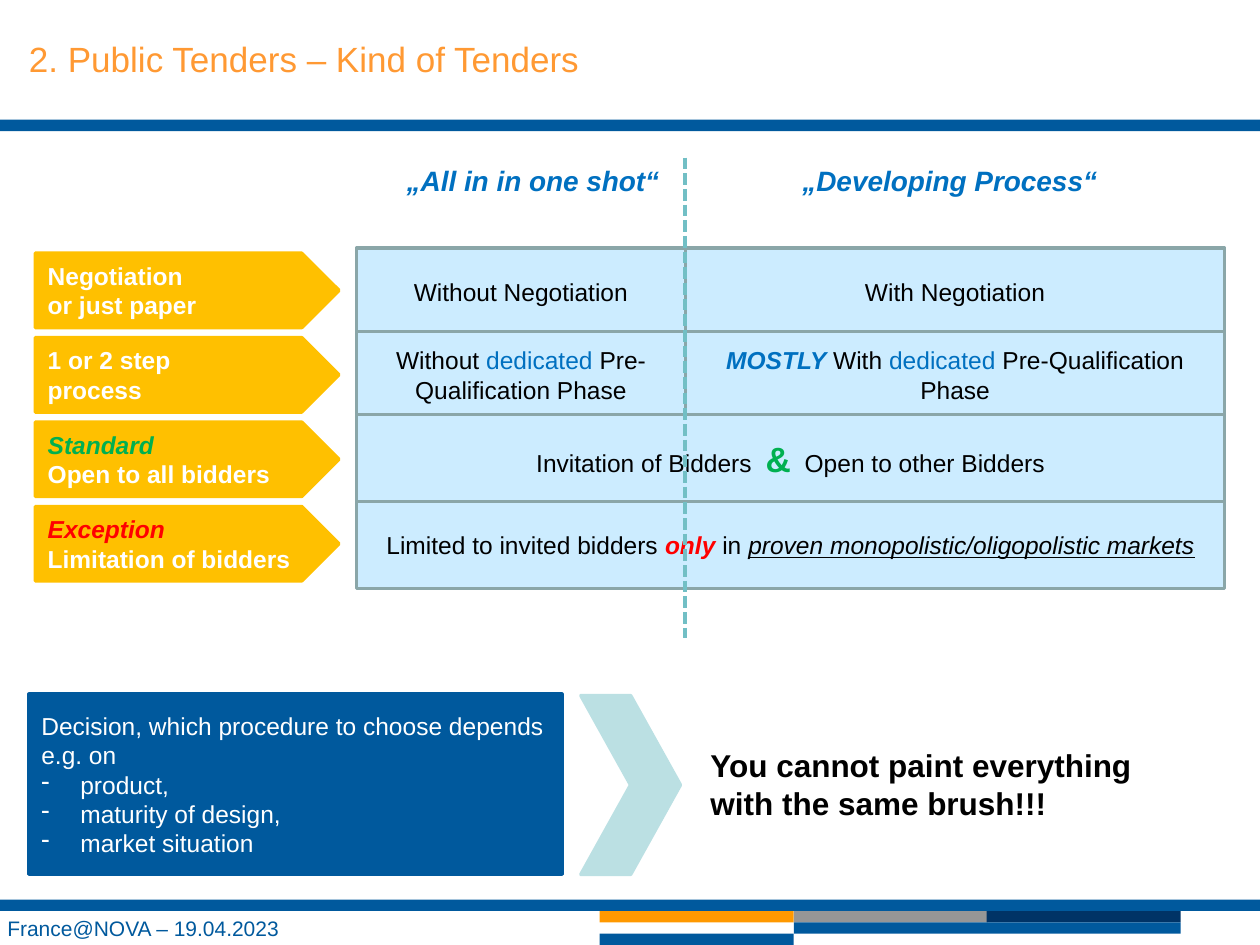
from pptx import Presentation
from pptx.dml.color import RGBColor
from pptx.enum import dml, shapes, text
from pptx.oxml.ns import qn
from pptx.util import Inches, Pt

BLUE = RGBColor(0x00, 0x59, 0x9D)
NAVY = RGBColor(0x00, 0x33, 0x66)
ACCENT = RGBColor(0x00, 0x70, 0xC0)
ORANGE = RGBColor(0xFF, 0x99, 0x00)
TITLE_ORANGE = RGBColor(0xFF, 0x99, 0x33)
GRAY = RGBColor(0x96, 0x96, 0x96)
AMBER = RGBColor(0xFF, 0xC0, 0x00)
PALE_BLUE = RGBColor(0xCC, 0xEC, 0xFF)
CELL_LINE = RGBColor(0x8A, 0xA6, 0xA8)
PALE_TEAL = RGBColor(0xBB, 0xE0, 0xE3)
TEAL = RGBColor(0x72, 0xBF, 0xC5)
GREEN = RGBColor(0x00, 0xB0, 0x50)
RED = RGBColor(0xFF, 0x00, 0x00)
WHITE = RGBColor(0xFF, 0xFF, 0xFF)
BLACK = RGBColor(0, 0, 0)

# Content: a line is a list of (words, format) runs
TITLE = "2. Public Tenders – Kind of Tenders"
FOOTER = "France@NOVA – 19.04.2023"
HEADINGS = [("„All in in one shot“", 3.13, 2.24), ("„Developing Process“", 6.27, 2.57)]
EMPHASIS = {"bold": True, "italic": True}
CRITERIA = [
    [[("Negotiation", {})], [("or just paper", {})]],
    [[("1 or 2 step", {})], [("process", {})]],
    [[("Standard", {"color": GREEN, "italic": True})], [("Open to all bidders", {})]],
    [[("Exception", {"color": RED, "italic": True})], [("Limitation of bidders", {})]],
]
DEDICATED = ("dedicated", {"color": ACCENT})
ROWS = [
    [[("Without Negotiation", {})], [("With Negotiation", {})]],
    [[("Without ", {}), DEDICATED, (" Pre-Qualification Phase", {})],
     [("MOSTLY ", {"color": ACCENT, **EMPHASIS}), ("With ", {}), DEDICATED,
      (" Pre-Qualification Phase", {})]],
    [[("Invitation of Bidders  ", {}), ("&", {"color": GREEN, "bold": True, "size": 20}),
      ("  Open to other Bidders", {})]],
    [[("Limited to invited bidders ", {}), ("only", {"color": RED, **EMPHASIS}), (" in ", {}),
      ("proven monopolistic/oligopolistic markets", {"italic": True, "underline": True})]],
]
DECISION = "Decision, which procedure to choose depends e.g. on"
FACTORS = ["product,", "maturity of design,", "market situation"]
CONCLUSION = ["You cannot paint everything", "with the same brush!!!"]

# Layout
BAR = 0.09
BARS = [  # left, top, width, colour
    (4.76, 7.23, 1.54, ORANGE), (6.3, 7.23, 1.54, GRAY), (7.83, 7.23, 1.54, NAVY),
    (0, 7.14, 10, BLUE), (6.3, 7.32, 3.07, BLUE), (4.76, 7.41, 1.54, BLUE), (0, 0.95, 10, BLUE),
]
GRID_LEFT, GRID_SPLIT, GRID_RIGHT = 2.83, 5.44, 9.72
ROW_TOPS, ROW_HEIGHT = [1.97, 2.63, 3.29, 3.98], 0.69
CRITERIA_TOP, CRITERIA_PITCH = 2.01, 0.67

prs = Presentation()
prs.slide_width, prs.slide_height = Inches(10), Inches(7.5)
slide = prs.slides.add_slide(prs.slide_layouts[5])


def set_font(font, size, color, **flags):
    font.name, font.size, font.color.rgb = "Arial", Pt(size), color
    for flag, value in flags.items():
        setattr(font, flag, value)


def write(frame, lines, size, color, align=text.PP_ALIGN.LEFT, **flags):
    for i, line in enumerate(lines):
        paragraph = frame.paragraphs[0] if i == 0 else frame.add_paragraph()
        paragraph.alignment = align
        set_font(paragraph.font, size, color, **flags)
        for words, style in line:
            run = paragraph.add_run()
            run.text = words
            if style:
                set_font(run.font, **{"size": size, "color": color, **flags, **style})


def add_block(kind, left, top, width, height, fill, line=None):
    block = slide.shapes.add_shape(kind, *map(Inches, (left, top, width, height)))
    block.shadow.inherit = False
    block.fill.solid()
    block.fill.fore_color.rgb = fill
    if line is None:
        block.line.fill.background()
    else:
        block.line.color.rgb = line
        block.line.width = Pt(2)
    block.text_frame.vertical_anchor = text.MSO_ANCHOR.MIDDLE
    return block


def add_label(left, top, width, height, lines, size, color, **flags):
    frame = slide.shapes.add_textbox(*map(Inches, (left, top, width, height))).text_frame
    frame.word_wrap = False
    write(frame, [[(words, {})] for words in lines], size, color, **flags)
    return frame


# Bars above and below the content
for left, top, width, color in BARS:
    add_block(shapes.MSO_SHAPE.RECTANGLE, left, top, width, BAR, color)

# Title
title = slide.shapes.title
title.left, title.top, title.width, title.height = map(Inches, (0.23, 0.3, 8.84, 0.52))
title_frame = title.text_frame
title_frame.margin_left = title_frame.margin_right = 0
title_frame.margin_top = title_frame.margin_bottom = 0
title_frame.vertical_anchor = text.MSO_ANCHOR.TOP
write(title_frame, [[(TITLE, {})]], 20, TITLE_ORANGE)

# Grid of procedures; a single cell spans the row
for top, cells in zip(ROW_TOPS, ROWS):
    edges = [GRID_LEFT, GRID_SPLIT, GRID_RIGHT] if len(cells) == 2 else [GRID_LEFT, GRID_RIGHT]
    for left, right, runs in zip(edges, edges[1:], cells):
        cell = add_block(shapes.MSO_SHAPE.RECTANGLE, left, top, right - left, ROW_HEIGHT,
                         PALE_BLUE, CELL_LINE)
        write(cell.text_frame, [runs], 14, BLACK, text.PP_ALIGN.CENTER)

# Column headings
for heading, left, width in HEADINGS:
    add_label(left, 1.25, width, 0.37, [heading], 16, ACCENT, **EMPHASIS)

# Criteria arrows
for i, lines in enumerate(CRITERIA):
    arrow = add_block(shapes.MSO_SHAPE.PENTAGON, 0.28, CRITERIA_TOP + i * CRITERIA_PITCH,
                      2.41, 0.59, AMBER, AMBER)
    write(arrow.text_frame, lines, 14, WHITE, bold=True)

# Decision box with bulleted factors
decision = add_block(shapes.MSO_SHAPE.RECTANGLE, 0.23, 5.51, 4.23, 1.43, BLUE, BLUE).text_frame
write(decision, [[(words, {})] for words in [DECISION, *FACTORS]], 14, WHITE)
for factor in decision.paragraphs[1:]:
    properties = factor._p.get_or_add_pPr()
    properties.set("marL", str(Inches(0.31)))
    properties.set("indent", str(-Inches(0.31)))
    bullet = properties.makeelement(qn("a:buChar"), {"char": "-"})
    properties.insert_element_before(bullet, "a:tabLst", "a:defRPr", "a:extLst")

# Conclusion
add_block(shapes.MSO_SHAPE.CHEVRON, 4.61, 5.52, 0.79, 1.42, PALE_TEAL, PALE_TEAL)
add_label(5.54, 5.87, 3.65, 0.71, CONCLUSION, 18, BLACK, bold=True)

# Dashed divider between the two approaches
divider = slide.shapes.add_connector(shapes.MSO_CONNECTOR.STRAIGHT, Inches(GRID_SPLIT),
                                     Inches(1.25), Inches(GRID_SPLIT), Inches(5.06))
divider.line.color.rgb = TEAL
divider.line.width = Pt(2.25)
divider.line.dash_style = dml.MSO_LINE.SQUARE_DOT
divider_properties = divider._element.spPr
divider_properties.append(divider_properties.makeelement(qn("a:effectLst"), {}))

# Footer
footer = add_label(-0.04, 7.23, 4.8, 0.27, [FOOTER], 12, BLUE)
footer.word_wrap = True
footer.margin_top = footer.margin_bottom = 0
footer.vertical_anchor = text.MSO_ANCHOR.MIDDLE

prs.save("out.pptx")
